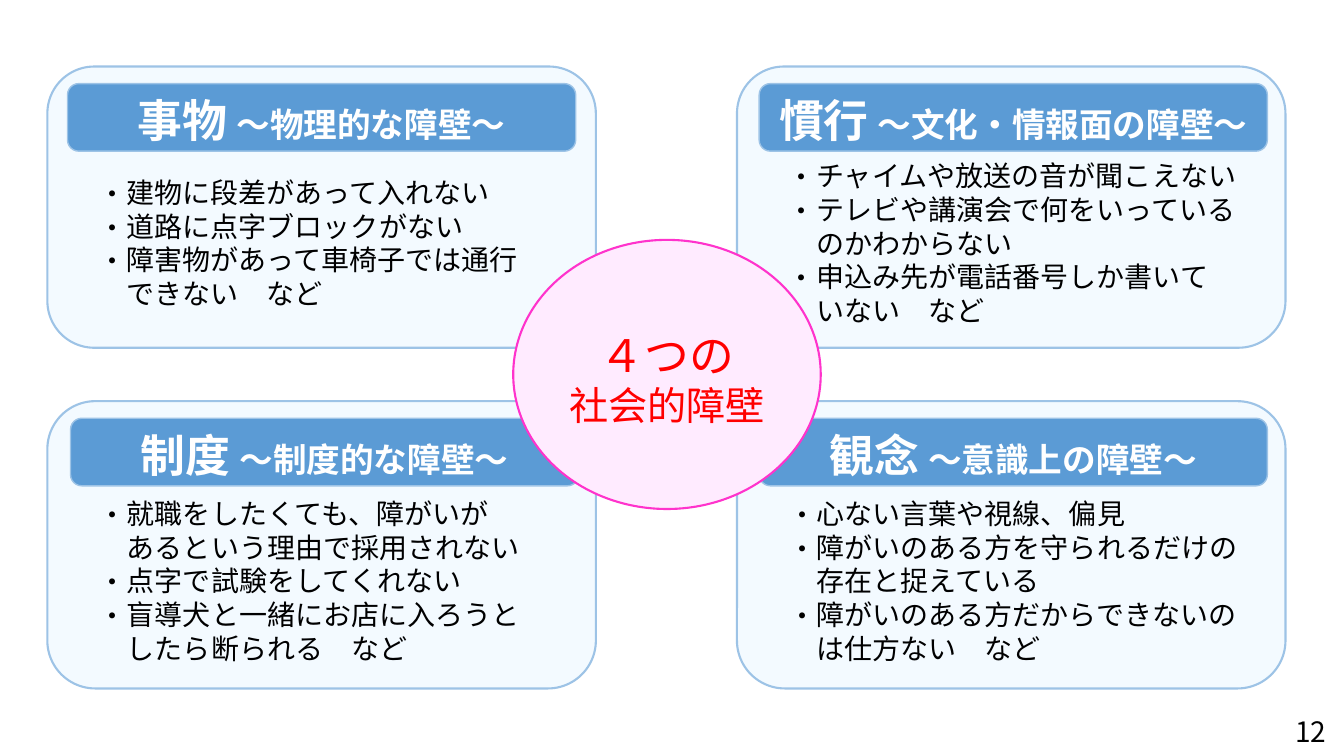
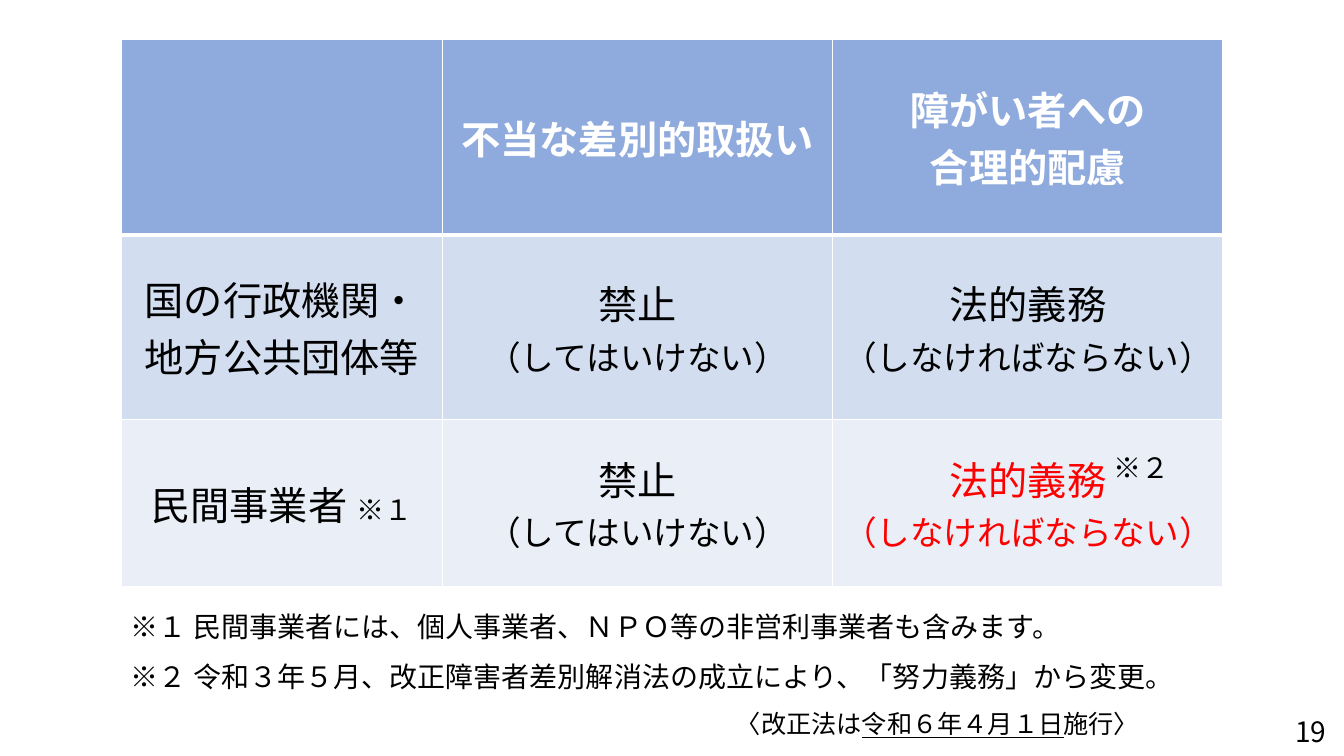
from lxml import etree
from pptx import Presentation
from pptx.dml.color import RGBColor
from pptx.enum.shapes import MSO_SHAPE
from pptx.enum.text import MSO_ANCHOR, PP_ALIGN
from pptx.oxml.ns import qn
from pptx.util import Pt

ROUND, OVAL = MSO_SHAPE.ROUNDED_RECTANGLE, MSO_SHAPE.OVAL
LEFT, CENTER = PP_ALIGN.LEFT, PP_ALIGN.CENTER
TOP, MIDDLE = MSO_ANCHOR.TOP, MSO_ANCHOR.MIDDLE
PX = 9144
FONT = "Noto Sans CJK JP"
LINE_PITCH = 1.2
COLORS = {
    "black": "000000", "white": "FFFFFF", "red": "FF0000",
    "card": "F3FAFF", "band": "5B9BD5", "edge": "9DC3E6",
    "pink": "FFEBFF", "magenta": "FF33CC",
    "header": "8FAADC", "row_dark": "D2DEEF", "row_light": "EAEFF7",
}


def rgb(name):
    """Return the named colour."""
    return RGBColor.from_string(COLORS[name])


class Deck:
    """Holds the shared style and the current slide."""

    def __init__(self, width, height):
        """Start an empty presentation of the given size."""
        self.prs = Presentation()
        self.prs.slide_width, self.prs.slide_height = width * PX, height * PX
        self.s = None

    def slide(self, number):
        """Add a blank slide with its page number."""
        self.s = self.prs.slides.add_slide(self.prs.slide_layouts[6])
        self.text((1275, 704, 57, 44), [[(str(number), 20)]], wrap=False)

    def put_text(self, tf, paras, color="black", bold=False, align=LEFT, spacing=1.0):
        """Fill a text frame from paragraphs of (text, size, underline) runs."""
        for i, runs in enumerate(paras):
            p = tf.add_paragraph() if i else tf.paragraphs[0]
            p.alignment = align
            if spacing:
                p.line_spacing = Pt(round(runs[0][1] * LINE_PITCH * spacing, 1))
            for text, size, *underline in runs:
                for j, part in enumerate(text.split("\n")):
                    if j:
                        p.add_line_break()
                    r = p.add_run()
                    r.text = part
                    f = r.font
                    f.name, f.size, f.bold = FONT, Pt(size), bold
                    f.color.rgb = rgb(color)
                    if underline:
                        f.underline = True
                    etree.SubElement(f._element, qn("a:ea")).set("typeface", FONT)

    def frame(self, tf, insets, anchor, wrap=True):
        """Set insets (left, top, right, bottom), anchor and wrapping."""
        tf.margin_left, tf.margin_top, tf.margin_right, tf.margin_bottom = (
            n * PX for n in insets)
        tf.vertical_anchor, tf.word_wrap = anchor, wrap

    def indent(self, p, left, first=0):
        """Set the left margin and first-line indent of a paragraph."""
        pPr = p._p.get_or_add_pPr()
        pPr.set("marL", str(left * PX))
        pPr.set("indent", str(first * PX))
        return pPr

    def bullet(self, p):
        """Give a paragraph a hanging middle-dot bullet."""
        pPr = self.indent(p, 28, -28)
        etree.SubElement(pPr, qn("a:buFont")).set("typeface", FONT)
        etree.SubElement(pPr, qn("a:buChar")).set("char", "・")

    def text(self, box, paras, wrap=True, spacing=1.0):
        """Add a text box."""
        tf = self.s.shapes.add_textbox(*(n * PX for n in box)).text_frame
        self.frame(tf, (10, 5, 10, 5), TOP, wrap)
        self.put_text(tf, paras, spacing=spacing)
        return tf

    def shape(self, kind, box, fill, edge, weight, insets):
        """Add an outlined shape and return its text frame."""
        sp = self.s.shapes.add_shape(kind, *(n * PX for n in box))
        sp.shadow.inherit = False
        sp.fill.solid()
        sp.fill.fore_color.rgb = rgb(fill)
        sp.line.color.rgb = rgb(edge)
        sp.line.width = Pt(weight)
        self.frame(sp.text_frame, insets, MIDDLE)
        return sp.text_frame

    def card(self, x, y, height, band_dx, title, subtitle, items):
        """Add a bulleted card with a title band."""
        tf = self.shape(ROUND, (x, y, 544, height), "card", "edge", 1.5,
                        (37, 76, 0, 5))
        self.put_text(tf, [[(item, 20)] for item in items])
        for p in tf.paragraphs:
            self.bullet(p)
        tf = self.shape(ROUND, (x + band_dx, y + 17, 504, 67), "band", "edge", 1,
                        (0, 5, 0, 0))
        self.put_text(tf, [[(title, 32), (" ", 28), (subtitle, 24)]],
                      "white", True, CENTER)

    def border(self, cell, bottom):
        """Draw white cell borders, the lower one of the given weight."""
        tcPr = cell._tc.get_or_add_tcPr()
        for side, weight in (("L", 1), ("R", 1), ("T", 1), ("B", bottom)):
            ln = etree.SubElement(tcPr, qn(f"a:ln{side}"), w=str(Pt(weight)))
            fill = etree.SubElement(ln, qn("a:solidFill"))
            etree.SubElement(fill, qn("a:srgbClr"), val=COLORS["white"])

    def table(self, x, y, widths, heights, rows, fills, red_cells):
        """Add a table whose first row is the header."""
        shape = self.s.shapes.add_table(
            len(rows), len(widths), x * PX, y * PX,
            sum(widths) * PX, sum(heights) * PX)
        tbl = shape.table
        for col, width in zip(tbl.columns, widths):
            col.width = width * PX
        for i, (row, height) in enumerate(zip(rows, heights)):
            tbl.rows[i].height = height * PX
            for j, paras in enumerate(row):
                cell = tbl.cell(i, j)
                self.border(cell, 1 if i else 3)
                cell.fill.solid()
                cell.fill.fore_color.rgb = rgb(fills[i])
                cell.vertical_anchor = MIDDLE
                color = "black" if i else "white"
                if (i, j) in red_cells:
                    color = "red"
                self.put_text(cell.text_frame, paras, color, i == 0, CENTER, None)


def barriers(deck):
    """Build the slide of the four social barriers."""
    deck.slide(12)
    deck.card(47, 66, 279, 20, "事物", "～物理的な障壁～", [
        "建物に段差があって入れない",
        "道路に点字ブロックがない",
        "障害物があって車椅子では通行\nできない　など"])
    deck.card(731, 66, 279, 22, "慣行", "～文化・情報面の障壁～", [
        "チャイムや放送の音が聞こえない",
        "テレビや講演会で何をいっている\nのかわからない",
        "申込み先が電話番号しか書いて\nいない　など"])
    deck.card(47, 398, 285, 23, "制度", "～制度的な障壁～", [
        "就職をしたくても、障がいが\nあるという理由で採用されない",
        "点字で試験をしてくれない",
        "盲導犬と一緒にお店に入ろうと\nしたら断られる　など"])
    deck.card(731, 398, 285, 22, "観念", "～意識上の障壁～", [
        "心ない言葉や視線、偏見",
        "障がいのある方を守られるだけの\n存在と捉えている",
        "障がいのある方だからできないの\nは仕方ない　など"])
    tf = deck.shape(OVAL, (509, 238, 305, 267), "pink", "magenta", 1.5, (0, 8, 0, 0))
    deck.put_text(tf, [[("４つの", 32)], [("社会的障壁", 28)]], "red", align=CENTER)


def duties(deck):
    """Build the slide comparing duties by kind of organisation."""
    deck.slide(19)
    banned = [[("禁止", 28)], [("（してはいけない）", 24)]]
    required = [[("法的義務", 28)], [("（しなければならない）", 24)]]
    deck.table(120, 39, (319, 387, 387), (194, 183, 166), [
        [[], [[("不当な差別的取扱い", 28)]],
         [[("障がい者への", 28)], [("合理的配慮", 28)]]],
        [[[("国の行政機関・地方公共団体等", 28)]], banned, required],
        [[[("民間事業者 ", 28), ("※１", 20)]], banned, required],
    ], ("header", "row_dark", "row_light"), {(2, 2)})
    tf = deck.text((120, 583, 1031, 157), [
        [("※１ 民間事業者には、個人事業者、ＮＰＯ等の非営利事業者も含みます。", 20)],
        [("※２ 令和３年５月、改正障害者差別解消法の成立により、「努力義務」から変更。", 20)],
        [("〈改正法は", 18), ("令和６年４月１日", 18, True), ("施行〉", 18)],
    ], spacing=1.5)
    deck.indent(tf.paragraphs[2], 600)
    deck.text((1095, 442, 76, 44), [[("※２", 20)]], wrap=False)


def main():
    """Build and save the presentation."""
    deck = Deck(1333, 750)
    barriers(deck)
    duties(deck)
    deck.prs.save("out.pptx")


if __name__ == "__main__":
    main()
